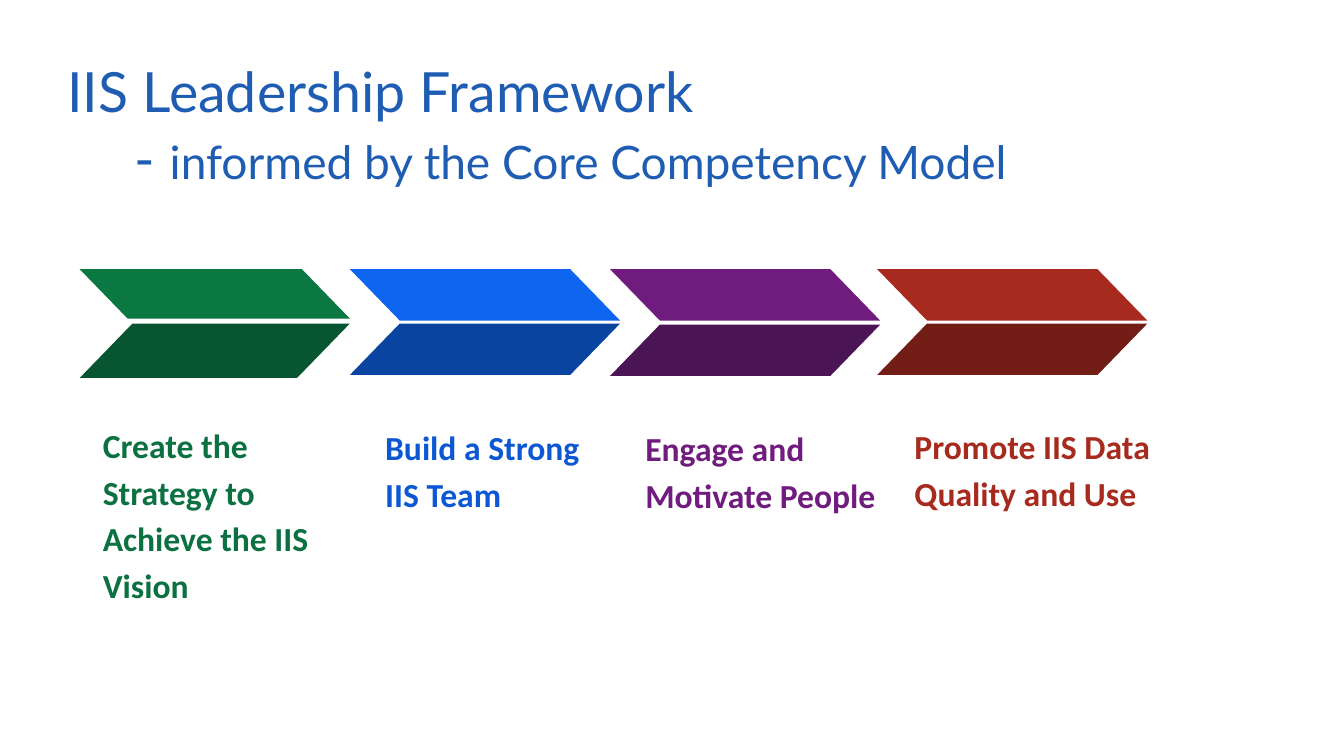
"""Builds the IIS Leadership Framework slide: four folded chevrons with captions."""
from pptx import Presentation
from pptx.dml.color import RGBColor
from pptx.enum import shapes, text
from pptx.util import Inches, Pt

BLUE = RGBColor(0x1E, 0x5D, 0xB2)
GREEN = RGBColor(0x0B, 0x71, 0x40)
LEAF = RGBColor(0x0B, 0x77, 0x43)
PINE = RGBColor(0x08, 0x56, 0x31)
AZURE = RGBColor(0x0C, 0x58, 0xD3)
SKY = RGBColor(0x0E, 0x65, 0xF0)
NAVY = RGBColor(0x09, 0x44, 0xA1)
PURPLE = RGBColor(0x70, 0x1C, 0x7F)
PLUM = RGBColor(0x4B, 0x14, 0x55)
RED = RGBColor(0xA7, 0x2A, 0x1E)
RUST = RGBColor(0x72, 0x1D, 0x15)

TOP, WIDTH, SLANT = 2.67, 2.68, 0.97

STEPS = [
    ("Create the\nStrategy to\nAchieve the IIS Vision", GREEN, LEAF, PINE,
     0.79, 0.49, 3.21, 0.54, (0.89, 4.03, 2.97, 1.32)),
    ("Build a Strong\nIIS Team", AZURE, SKY, NAVY,
     3.47, 0.51, 3.21, 0.51, (3.69, 4.05, 2.75, 1.3)),
    ("Engage and Motivate People", PURPLE, PURPLE, PLUM,
     6.05, 0.51, 3.22, 0.51, (6.27, 4.06, 2.75, 2.25)),
    ("Promote IIS Data Quality and Use", RED, RED, RUST,
     8.7, 0.51, 3.21, 0.51, (8.94, 4.04, 2.81, 1.31)),
]


def add_text(parent, box, words, inset):
    frame = parent.shapes.add_textbox(*map(Inches, box)).text_frame
    frame.word_wrap = True
    frame.margin_left = frame.margin_right = Inches(inset[0])
    frame.margin_top = frame.margin_bottom = Inches(inset[1])
    frame.text = words
    return frame


def style(run, name, size, color, bold=False):
    run.font.name = name
    run.font.size = Pt(size)
    run.font.color.rgb = color
    run.font.bold = bold


prs = Presentation()
prs.slide_width, prs.slide_height = Inches(13.33), Inches(7.5)
slide = prs.slides.add_slide(prs.slide_layouts[6])

for words, ink, light, dark, left, high, low, deep, box in STEPS:
    group = slide.shapes.add_group_shape()
    label = add_text(group, box, words, (0.13, 0.13))
    for para in label.paragraphs:
        para.line_spacing = 1.15
        style(para.runs[0], "Calibri", 24, ink, True)
    for top, height, color, flip in ((TOP, high, light, True), (low, deep, dark, False)):
        half = group.shapes.add_shape(
            shapes.MSO_SHAPE.PARALLELOGRAM,
            Inches(left), Inches(top), Inches(WIDTH), Inches(height))
        half.adjustments[0] = SLANT
        half.shadow.inherit = False
        half.fill.solid()
        half.fill.fore_color.rgb = color
        half.line.fill.background()
        if flip:
            half.element.spPr.xfrm.set("flipH", "1")

title = add_text(slide, (0.57, 0.69, 10.3, 1.08),
                 "IIS Leadership Framework\n- ", (0.1, 0.05))
title.vertical_anchor = text.MSO_ANCHOR.MIDDLE
head, sub = title.paragraphs
sub._p.get_or_add_pPr().set("marL", str(Inches(0.67)))
tail = sub.add_run()
tail.text = "informed by the Core Competency Model"
for run, size in ((head.runs[0], 39.6), (sub.runs[0], 39.6), (tail, 32.9)):
    style(run, "Lato", size, BLUE)

prs.save("out.pptx")
